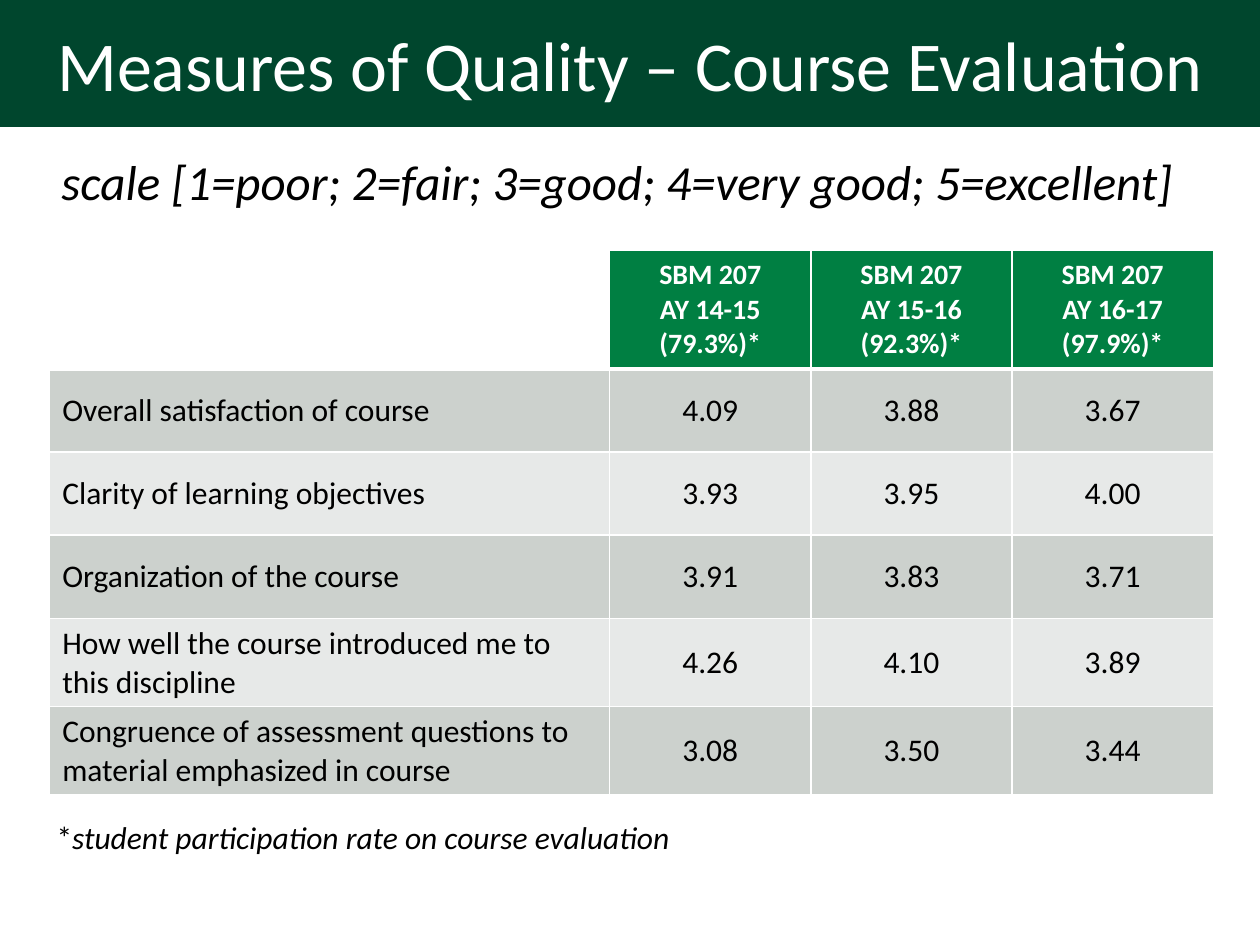
from dataclasses import dataclass

from lxml.etree import SubElement
from pptx import Presentation
from pptx.dml.color import RGBColor as Color
from pptx.enum.text import MSO_ANCHOR as Anchor, MSO_AUTO_SIZE as AutoSize, PP_ALIGN as Align
from pptx.oxml.ns import qn
from pptx.util import Pt

TITLE = "Measures of Quality – Course Evaluation"
SCALE = "scale [1=poor; 2=fair; 3=good; 4=very good; 5=excellent]"
FOOTNOTE = ("*", "student participation rate on course evaluation")
HEADERS = ["", "SBM 207\nAY 14-15 (79.3%)*", "SBM 207\nAY 15-16 (92.3%)*", "SBM 207\nAY 16-17 (97.9%)*"]
RATINGS = [
    ("Overall satisfaction of course", "4.09", "3.88", "3.67"),
    ("Clarity of learning objectives", "3.93", "3.95", "4.00"),
    ("Organization of the course", "3.91", "3.83", "3.71"),
    ("How well the course introduced me to this discipline", "4.26", "4.10", "3.89"),
    ("Congruence of assessment questions to material emphasized in course", "3.08", "3.50", "3.44"),
]

SLIDE_WIDTH, SLIDE_HEIGHT = 720, 540
TITLE_BOX = (0, 0, SLIDE_WIDTH, 72.6)
SCALE_BOX = (28, 82.8, 684, 57.6)
FOOTNOTE_BOX = (25.2, 463.7, 373, 29)
TABLE_LEFT, TABLE_TOP = 28.4, 142.9
COLUMN_WIDTHS = [320, 115, 115, 115]
HEADER_HEIGHT, ROW_HEIGHT = 68, 47.5
THIN_RULE, HEADER_RULE = 1, 3


@dataclass(frozen=True)
class Theme:
    font: str = "Calibri"
    title_size: int = 40
    scale_size: int = 28
    header_size: int = 16
    body_size: int = 18
    title_fill: str = "00462D"
    header_fill: str = "007F42"
    bands: tuple = ("CCD1CD", "E7E9E8")
    light: str = "FFFFFF"
    dark: str = "000000"


THEME = Theme()


def style_text(text_frame, size, color, align=Align.LEFT, bold=False, italic=False):
    for paragraph in text_frame.paragraphs:
        paragraph.alignment = align
        for run in paragraph.runs:
            font = run.font
            font.name, font.size = THEME.font, Pt(size)
            font.bold, font.italic = bold, italic
            font.color.rgb = Color.from_string(color)


def fill_solid(target, color):
    target.fill.solid()
    target.fill.fore_color.rgb = Color.from_string(color)


def set_borders(cell, widths):
    properties = cell._tc.get_or_add_tcPr()
    for index, (side, width) in enumerate(widths.items()):
        line = properties.makeelement(qn(f"a:{side}"), {"w": str(Pt(width))})
        SubElement(SubElement(line, qn("a:solidFill")), qn("a:srgbClr"), val=THEME.light)
        properties.insert(index, line)


def add_title(slide):
    title = slide.shapes.title
    title.left, title.top, title.width, title.height = map(Pt, TITLE_BOX)
    fill_solid(title, THEME.title_fill)
    title.text_frame.text = TITLE
    title.text_frame.auto_size = AutoSize.NONE
    title.text_frame.vertical_anchor = Anchor.MIDDLE
    style_text(title.text_frame, THEME.title_size, THEME.light, Align.CENTER)


def add_scale(slide):
    text_frame = slide.shapes.add_textbox(*map(Pt, SCALE_BOX)).text_frame
    text_frame.word_wrap = True
    text_frame.text = SCALE
    style_text(text_frame, THEME.scale_size, THEME.dark, italic=True)


def add_footnote(slide):
    text_frame = slide.shapes.add_textbox(*map(Pt, FOOTNOTE_BOX)).text_frame
    text_frame.word_wrap = False
    text_frame.auto_size = AutoSize.SHAPE_TO_FIT_TEXT
    paragraph = text_frame.paragraphs[0]
    for part in FOOTNOTE:
        paragraph.add_run().text = part
    style_text(text_frame, THEME.body_size, THEME.dark)
    paragraph.runs[1].font.italic = True


def format_cell(cell, text, row, column):
    is_header = row == 0
    cell.text_frame.text = text
    cell.vertical_anchor = Anchor.MIDDLE
    align = Align.LEFT if column == 0 else Align.CENTER
    if is_header:
        style_text(cell.text_frame, THEME.header_size, THEME.light, align, bold=True)
    else:
        style_text(cell.text_frame, THEME.body_size, THEME.dark, align)
    if not text:
        cell.fill.background()
    else:
        fill_solid(cell, THEME.header_fill if is_header else THEME.bands[(row - 1) % 2])
    set_borders(cell, {
        "lnL": THIN_RULE,
        "lnR": THIN_RULE,
        "lnT": HEADER_RULE if row == 1 else THIN_RULE,
        "lnB": HEADER_RULE if is_header else THIN_RULE,
    })


def add_ratings(slide):
    rows = [HEADERS, *RATINGS]
    heights = [HEADER_HEIGHT] + [ROW_HEIGHT] * len(RATINGS)
    box = (TABLE_LEFT, TABLE_TOP, sum(COLUMN_WIDTHS), sum(heights))
    table = slide.shapes.add_table(len(rows), len(HEADERS), *map(Pt, box)).table
    for column, width in zip(table.columns, COLUMN_WIDTHS):
        column.width = Pt(width)
    for row, (values, height) in enumerate(zip(rows, heights)):
        table.rows[row].height = Pt(height)
        for column, text in enumerate(values):
            format_cell(table.cell(row, column), text, row, column)


def main():
    """Build the course evaluation slide and save it."""
    presentation = Presentation()
    presentation.slide_width, presentation.slide_height = Pt(SLIDE_WIDTH), Pt(SLIDE_HEIGHT)
    slide = presentation.slides.add_slide(presentation.slide_layouts.get_by_name("Title Only"))
    add_title(slide)
    add_scale(slide)
    add_ratings(slide)
    add_footnote(slide)
    presentation.save("out.pptx")


if __name__ == "__main__":
    main()
